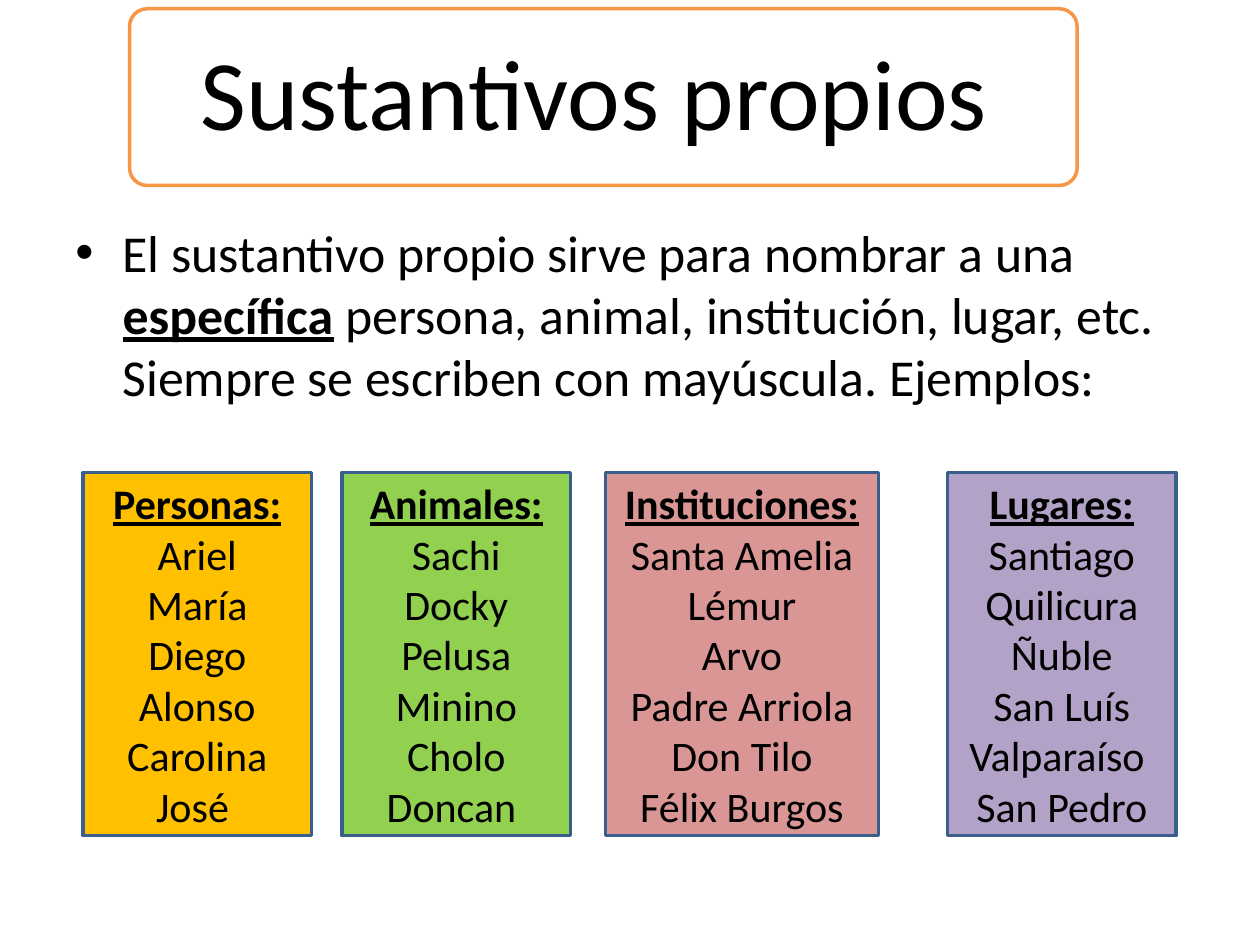
from dataclasses import dataclass

import lxml.etree
import pptx
import pptx.dml.color
import pptx.enum.shapes
import pptx.enum.text
import pptx.oxml.ns
import pptx.util

Pt = pptx.util.Pt
FONT = "Calibri"
BLACK = "000000"


@dataclass
class ExampleBox:
    left: float
    width: float
    fill: str
    heading: str
    names: list[str]


EXAMPLE_BOXES = [
    ExampleBox(47.5, 130.5, "FFC000", "Personas:",
               ["Ariel", "María", "Diego", "Alonso", "Carolina", "José "]),
    ExampleBox(195.5, 130.5, "92D050", "Animales:",
               ["Sachi", "Docky", "Pelusa", "Minino", "Cholo", "Doncan "]),
    ExampleBox(346, 156, "D99694", "Instituciones:",
               ["Santa Amelia", "Lémur", "Arvo", "Padre Arriola", "Don Tilo", "Félix Burgos"]),
    ExampleBox(541.5, 130.5, "B3A2C7", "Lugares:",
               ["Santiago", "Quilicura", "Ñuble", "San Luís", "Valparaíso ", "San Pedro"]),
]


def color(value: str) -> pptx.dml.color.RGBColor:
    return pptx.dml.color.RGBColor.from_string(value)


def format_run(run, size: float, emphasis: bool = False) -> None:
    run.font.name = FONT
    run.font.size = Pt(size)
    run.font.color.rgb = color(BLACK)
    run.font.bold = emphasis
    run.font.underline = emphasis


def add_box(slide, kind, left: float, top: float, width: float, height: float,
            fill: str, line: str):
    shape = slide.shapes.add_shape(kind, Pt(left), Pt(top), Pt(width), Pt(height))
    shape.shadow.inherit = False
    shape.fill.solid()
    shape.fill.fore_color.rgb = color(fill)
    shape.line.color.rgb = color(line)
    shape.line.width = Pt(2)
    return shape


def add_title(slide) -> None:
    frame = add_box(slide, pptx.enum.shapes.MSO_SHAPE.ROUNDED_RECTANGLE,
                    74, 5, 541.5, 101, "FFFFFF", "F79646")
    frame.adjustments[0] = 0.1
    title = slide.shapes.title
    frame.element.addnext(title.element)
    title.left, title.top, title.width, title.height = Pt(48), Pt(8.5), Pt(595.5), Pt(95)
    text_frame = title.text_frame
    text_frame.text = "Sustantivos propios "
    text_frame.auto_size = pptx.enum.text.MSO_AUTO_SIZE.NONE
    text_frame.vertical_anchor = pptx.enum.text.MSO_ANCHOR.MIDDLE
    text_frame.margin_left = text_frame.margin_right = Pt(17)
    text_frame.margin_top = text_frame.margin_bottom = Pt(17)
    paragraph = text_frame.paragraphs[0]
    paragraph.alignment = pptx.enum.text.PP_ALIGN.CENTER
    paragraph.line_spacing = 0.9
    format_run(paragraph.runs[0], 57)


def add_definition(slide) -> None:
    text_box = slide.shapes.add_textbox(Pt(36), Pt(122.5), Pt(648), Pt(130))
    text_box.text_frame.word_wrap = True
    paragraph = text_box.text_frame.paragraphs[0]
    paragraph.space_before = Pt(6)
    properties = paragraph._p.get_or_add_pPr()
    properties.set("marL", str(Pt(27)))
    properties.set("indent", str(Pt(-27)))
    qualified_name = pptx.oxml.ns.qn
    lxml.etree.SubElement(properties, qualified_name("a:buFont"), typeface="Arial")
    lxml.etree.SubElement(properties, qualified_name("a:buChar"), char="•")
    for text, emphasis in (
        ("El sustantivo propio sirve para nombrar a una ", False),
        ("específica", True),
        (" persona, animal, institución, lugar, etc. "
         "Siempre se escriben con mayúscula. Ejemplos:", False),
    ):
        run = paragraph.add_run()
        run.text = text
        format_run(run, 29.6, emphasis)


def add_examples(slide, box: ExampleBox) -> None:
    shape = add_box(slide, pptx.enum.shapes.MSO_SHAPE.RECTANGLE,
                    box.left, 270, box.width, 207.5, box.fill, "3A5F8C")
    text_frame = shape.text_frame
    text_frame.word_wrap = True
    text_frame.vertical_anchor = pptx.enum.text.MSO_ANCHOR.MIDDLE
    text_frame.text = "\n".join([box.heading, *box.names])
    for index, paragraph in enumerate(text_frame.paragraphs):
        paragraph.alignment = pptx.enum.text.PP_ALIGN.CENTER
        format_run(paragraph.runs[0], 24, index == 0)


def main() -> None:
    presentation = pptx.Presentation()
    presentation.slide_width, presentation.slide_height = Pt(720), Pt(540)
    slide = presentation.slides.add_slide(presentation.slide_layouts.get_by_name("Title Only"))
    add_title(slide)
    add_definition(slide)
    for box in EXAMPLE_BOXES:
        add_examples(slide, box)
    presentation.save("out.pptx")


if __name__ == "__main__":
    main()
